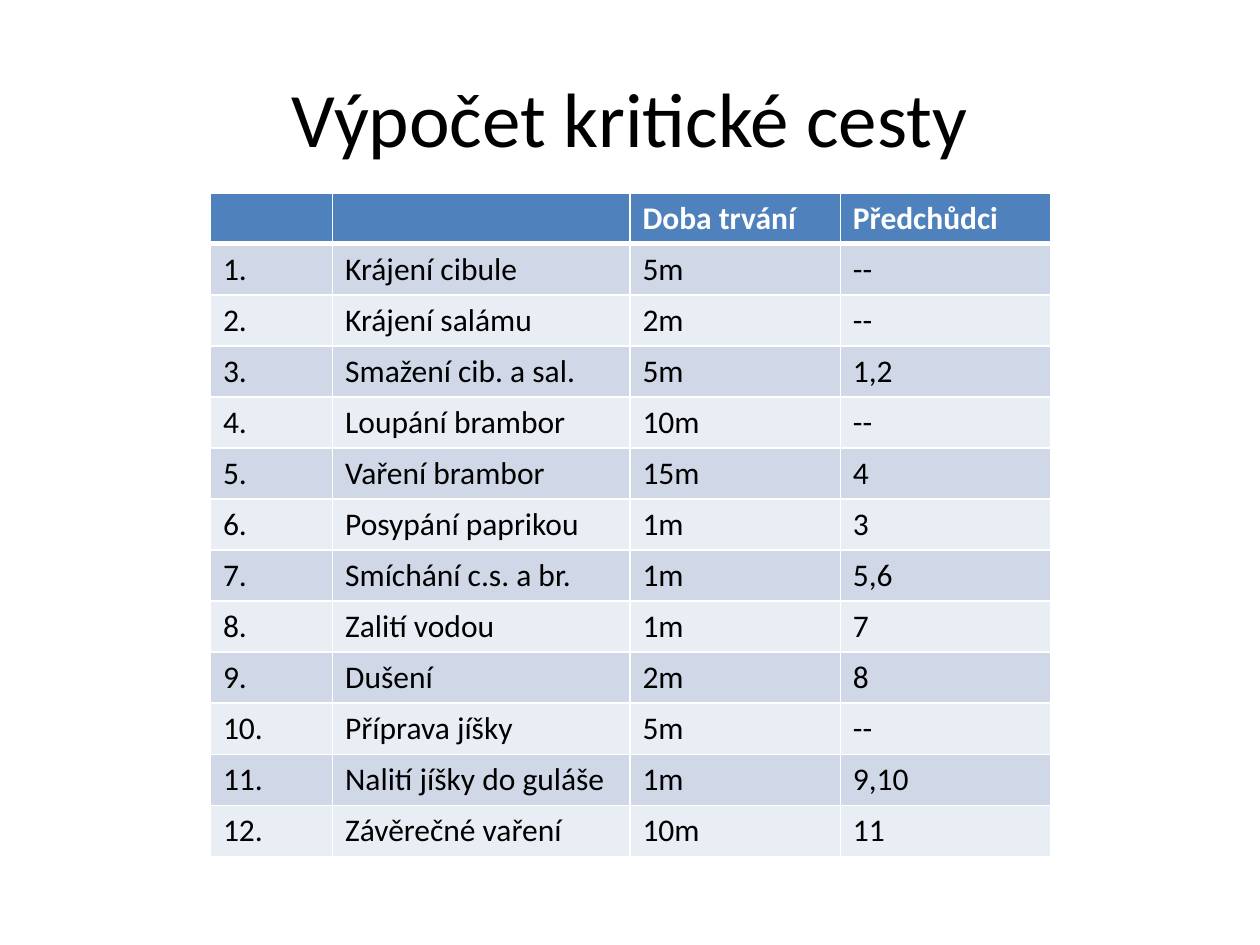
"""Build the slide with the task table for the critical path calculation."""
from lxml import etree
from pptx import Presentation
from pptx.dml.color import RGBColor
from pptx.enum.text import MSO_ANCHOR, PP_ALIGN
from pptx.oxml.ns import qn
from pptx.util import Inches, Pt

MIDDLE = MSO_ANCHOR.MIDDLE
CENTER = PP_ALIGN.CENTER
FONT = "Calibri"
COLORS = {
    "text": "000000",
    "header_text": "FFFFFF",
    "header": "4F81BD",
    "odd": "D0D8E8",
    "even": "E9EDF4",
    "border": "FFFFFF",
}
HEADER = ("", "", "Doba trvání", "Předchůdci")
TASKS = [
    ("Krájení cibule", "5m", "--"),
    ("Krájení salámu", "2m", "--"),
    ("Smažení cib. a sal.", "5m", "1,2"),
    ("Loupání brambor", "10m", "--"),
    ("Vaření brambor", "15m", "4"),
    ("Posypání paprikou", "1m", "3"),
    ("Smíchání c.s. a br.", "1m", "5,6"),
    ("Zalití vodou", "1m", "7"),
    ("Dušení", "2m", "8"),
    ("Příprava jíšky", "5m", "--"),
    ("Nalití jíšky do guláše", "1m", "9,10"),
    ("Závěrečné vaření", "10m", "11"),
]
COLUMN_WIDTHS = (0.97, 2.36, 1.67, 1.67)
TABLE_HEIGHT = 5.27


def style_text(paragraph, size, color, bold=False):
    for run in paragraph.runs:
        run.font.name = FONT
        run.font.size = Pt(size)
        run.font.bold = bold
        run.font.color.rgb = RGBColor.from_string(COLORS[color])


def add_border(cell, side, width):
    line = etree.SubElement(cell._tc.get_or_add_tcPr(), qn(f"a:ln{side}"), w=str(Pt(width)))
    fill = etree.SubElement(line, qn("a:solidFill"))
    etree.SubElement(fill, qn("a:srgbClr"), val=COLORS["border"])


prs = Presentation()
prs.slide_width = Inches(10)
prs.slide_height = Inches(7.5)
slide = prs.slides.add_slide(prs.slide_layouts[6])

title = slide.shapes.add_textbox(Inches(0.5), Inches(0.3), Inches(9), Inches(1.25)).text_frame
title.word_wrap = True
title.vertical_anchor = MIDDLE
title.text = "Výpočet kritické cesty"
title.paragraphs[0].alignment = CENTER
style_text(title.paragraphs[0], 44, "text")

rows = [HEADER] + [(f"{number}.", *task) for number, task in enumerate(TASKS, 1)]
schedule = slide.shapes.add_table(
    len(rows), len(HEADER), Inches(1.67), Inches(1.53),
    Inches(sum(COLUMN_WIDTHS)), Inches(TABLE_HEIGHT),
).table
for column, width in zip(schedule.columns, COLUMN_WIDTHS):
    column.width = Inches(width)

for row_index, values in enumerate(rows):
    schedule.rows[row_index].height = Inches(TABLE_HEIGHT / len(rows))
    is_header = row_index == 0
    band = "header" if is_header else "odd" if row_index % 2 else "even"
    for column_index, value in enumerate(values):
        cell = schedule.cell(row_index, column_index)
        cell.text = value
        style_text(cell.text_frame.paragraphs[0], 18,
                   "header_text" if is_header else "text", is_header)
        for side in "LRTB":
            under_header = (row_index, side) in ((0, "B"), (1, "T"))
            add_border(cell, side, 3 if under_header else 1)
        cell.fill.solid()
        cell.fill.fore_color.rgb = RGBColor.from_string(COLORS[band])

prs.save("out.pptx")
